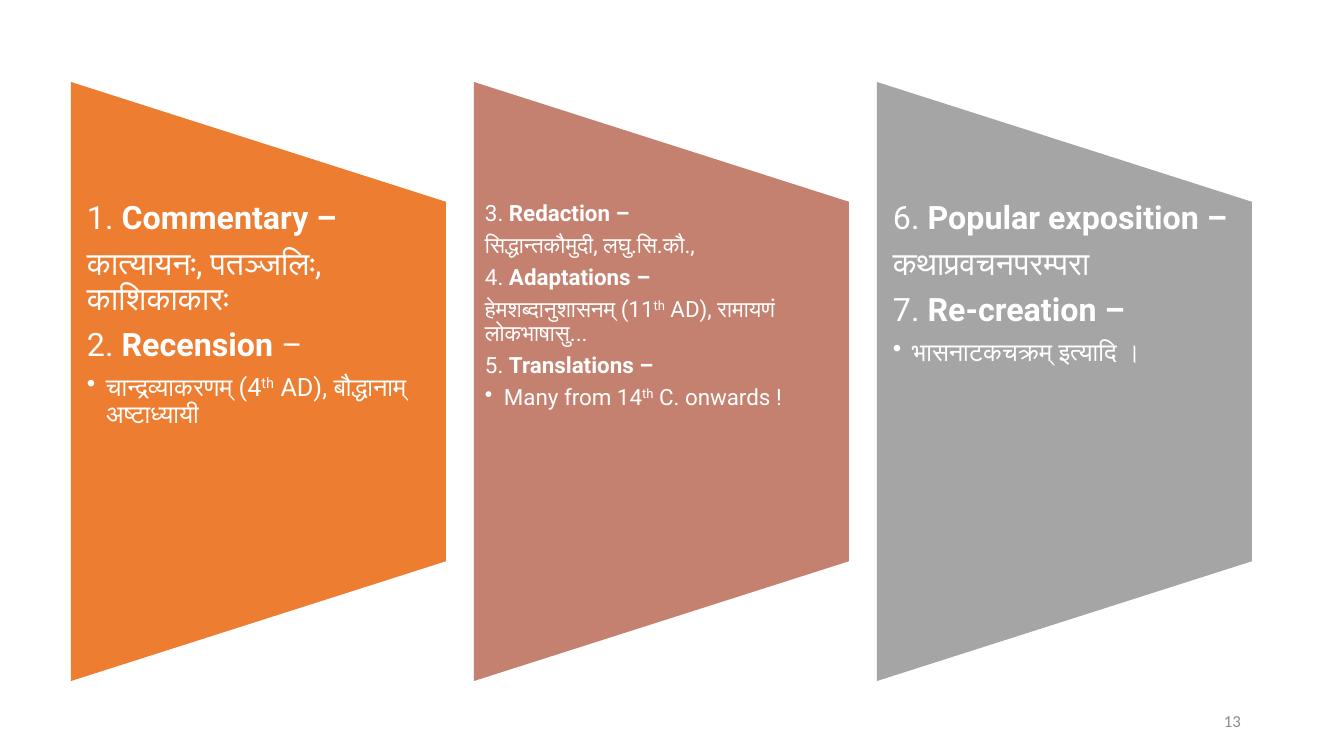
from pptx import Presentation
from pptx.dml.color import RGBColor as RGB
from pptx.enum.shapes import MSO_SHAPE as SHAPE
from pptx.enum.text import MSO_ANCHOR as ANCHOR, PP_ALIGN as ALIGN
from pptx.util import Pt
from lxml.etree import SubElement
from pptx.oxml.ns import qn

ORANGE = RGB(0xED, 0x7D, 0x31)
ROSE = RGB(0xC4, 0x81, 0x70)
GRAY = RGB(0xA5, 0xA5, 0xA5)
WHITE = RGB(0xFF, 0xFF, 0xFF)
DIM = RGB(0x8C, 0x8C, 0x8C)

PLAIN, BOLD, SUPER = "plain", "bold", "super"
LINE, BULLET = "line", "bullet"

# Each panel: fill, side inset, line size, bullet size, paragraphs
PANELS = [
    (ORANGE, 16, 23, 18, [
        (LINE, [("1. ", PLAIN), ("Commentary –", BOLD)]),
        (LINE, [("कात्यायनः, पतञ्जलिः, काशिकाकारः", PLAIN)]),
        (LINE, [("2. ", PLAIN), ("Recension", BOLD), (" –", PLAIN)]),
        (BULLET, [("चान्द्रव्याकरणम् (4", PLAIN), ("th", SUPER),
                  (" AD), बौद्धानाम् अष्टाध्यायी", PLAIN)]),
    ]),
    (ROSE, 11, 16, 16, [
        (LINE, [("3. ", PLAIN), ("Redaction –", BOLD)]),
        (LINE, [("सिद्धान्तकौमुदी, लघु.सि.कौ.,", PLAIN)]),
        (LINE, [("4. ", PLAIN), ("Adaptations –", BOLD)]),
        (LINE, [("हेमशब्दानुशासनम् (11", PLAIN), ("th", SUPER),
                (" AD), रामायणं लोकभाषासु...", PLAIN)]),
        (LINE, [("5. ", PLAIN), ("Translations –", BOLD)]),
        (BULLET, [("Many from 14", PLAIN), ("th", SUPER),
                  (" C. onwards !", PLAIN)]),
    ]),
    (GRAY, 16, 23, 18, [
        (LINE, [("6. ", PLAIN), ("Popular exposition –", BOLD)]),
        (LINE, [("कथाप्रवचनपरम्परा", PLAIN)]),
        (LINE, [("7. ", PLAIN), ("Re-creation –", BOLD)]),
        (BULLET, [("भासनाटकचक्रम् इत्यादि ।", PLAIN)]),
    ]),
]
PAGE = "13"

LEFT, TOP, WIDE, TALL, STEP = 71, 82, 375, 599, 403
HANG = 19


def px(n):
    return round(n * 914400 / 100.8)


def add_box(slide, left, top, wide, tall, side, edge):
    box = slide.shapes.add_textbox(px(left), px(top), px(wide), px(tall))
    frame = box.text_frame
    frame.word_wrap = True
    frame.margin_left = frame.margin_right = px(side)
    frame.margin_top = frame.margin_bottom = px(edge)
    return frame


def set_font(para, name, size, color):
    font = para.font
    font.name, font.size = name, Pt(size)
    font.color.rgb = color


def add_bullet(para):
    props = para._p.get_or_add_pPr()
    props.set("marL", str(px(HANG)))
    props.set("indent", str(-px(HANG)))
    mark = SubElement(props, qn("a:buChar"))
    mark.set("char", "•")


def add_runs(para, runs):
    for text, style in runs:
        run = para.add_run()
        run.text = text
        if style == BOLD:
            run.font.bold = True
        elif style == SUPER:
            run._r.get_or_add_rPr().set("baseline", "30000")


def add_panel(slide, left, fill):
    """Draw a trapezoid turned on its side, so its width and height swap."""
    shift = (TALL - WIDE) / 2
    panel = slide.shapes.add_shape(
        SHAPE.FLOWCHART_MANUAL_OPERATION,
        px(left - shift), px(TOP + shift), px(TALL), px(WIDE))
    panel.rotation = 270
    panel.shadow.inherit = False
    panel.fill.solid()
    panel.fill.fore_color.rgb = fill
    panel.line.fill.background()


def add_text(slide, left, side, sizes, paras):
    frame = add_box(slide, left, TOP + TALL / 5, WIDE, TALL * 3 / 5, side, 0)
    for i, (kind, runs) in enumerate(paras):
        para = frame.add_paragraph() if i else frame.paragraphs[0]
        size = sizes[kind]
        gap = 0.15 if kind == BULLET else 0.35
        para.line_spacing = 0.9
        para.space_after = Pt(round(size * gap, 1))
        if kind == BULLET:
            add_bullet(para)
        set_font(para, "Roboto", size, WHITE)
        add_runs(para, runs)


def main():
    deck = Presentation()
    deck.slide_width, deck.slide_height = px(1344), px(756)
    slide = deck.slides.add_slide(deck.slide_layouts[6])

    for i, (fill, side, size, small, paras) in enumerate(PANELS):
        left = LEFT + i * STEP
        add_panel(slide, left, fill)
        add_text(slide, left, side, {LINE: size, BULLET: small}, paras)

    frame = add_box(slide, 949, 701, 302, 40, 10, 5)
    frame.vertical_anchor = ANCHOR.MIDDLE
    para = frame.paragraphs[0]
    para.alignment = ALIGN.RIGHT
    set_font(para, "Calibri", 12, DIM)
    add_runs(para, [(PAGE, PLAIN)])

    deck.save("out.pptx")


if __name__ == "__main__":
    main()
